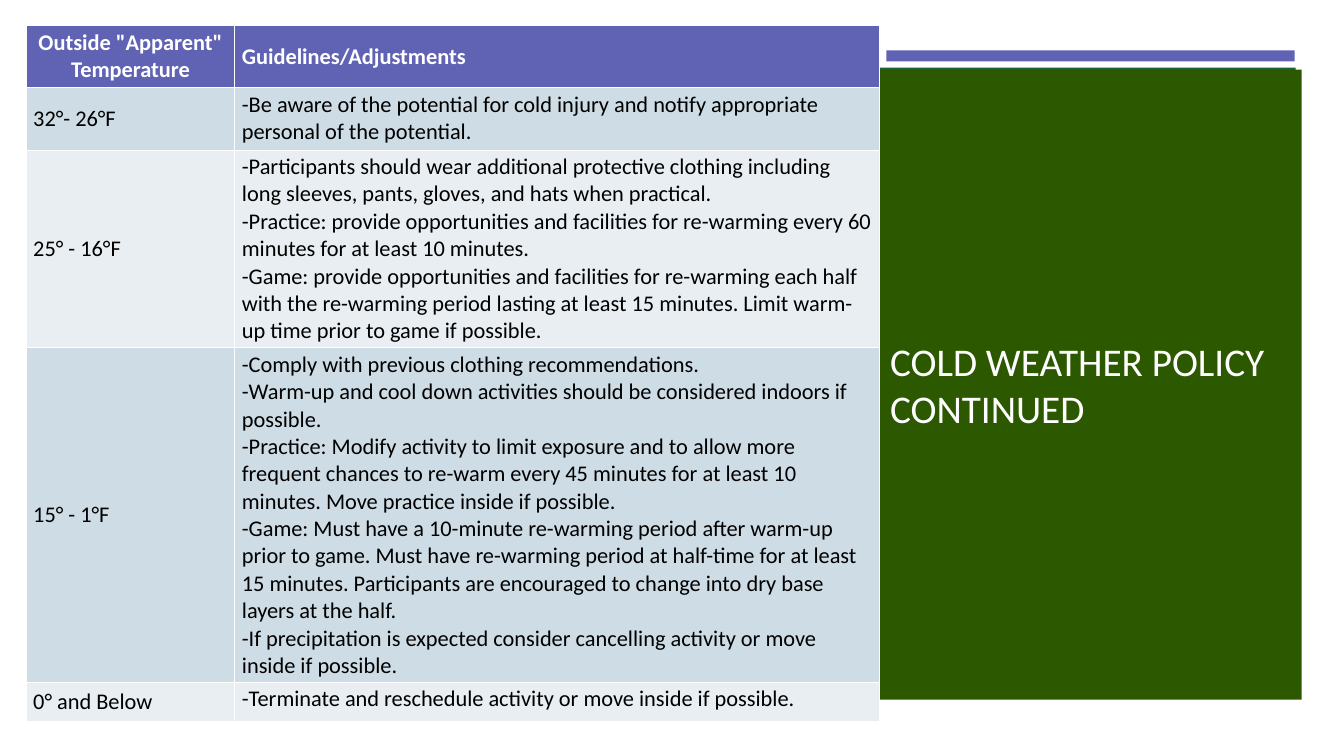
from dataclasses import dataclass

from pptx import Presentation
from pptx.dml.color import RGBColor
from pptx.enum.shapes import MSO_SHAPE as Shape
from pptx.enum.text import MSO_ANCHOR as Anchor, PP_ALIGN as Align
from pptx.util import Inches, Pt


@dataclass(frozen=True)
class Theme:
    font: str = "Calibri"
    title_size: int = 28
    table_size: int = 16
    purple: str = "6063B4"
    band_green: str = "1E6238"
    title_green: str = "2C5800"
    odd_row: str = "CEDCE5"
    even_row: str = "E8EEF2"
    white: str = "FFFFFF"
    title_text: str = "FFFEFF"
    black: str = "000000"


@dataclass(frozen=True)
class Block:
    left: float
    top: float
    width: float
    height: float
    color: str


@dataclass(frozen=True)
class Guideline:
    temperature: str
    height: float
    actions: tuple[str, ...]


THEME = Theme()

ACCENT_BAR = Block(8.79, 0.5, 4.05, 0.11, THEME.purple)
GREEN_BAND = Block(8.72, 0.67, 4.13, 1.3, THEME.band_green)
TITLE_PANEL = Block(8.73, 0.69, 4.18, 6.25, THEME.title_green)

COLUMN_WIDTHS = (2.07, 6.39)
HEADER = Guideline('Outside "Apparent" Temperature', 0.62, ("Guidelines/Adjustments",))
GUIDELINES = (
    Guideline("32°- 26°F", 0.62, (
        "-Be aware of the potential for cold injury and notify appropriate personal of the potential.",
    )),
    Guideline("25° - 16°F", 1.93, (
        "-Participants should wear additional protective clothing including long sleeves, pants, "
        "gloves, and hats when practical.",
        "-Practice: provide opportunities and facilities for re-warming every 60 minutes for at "
        "least 10 minutes.",
        "-Game: provide opportunities and facilities for re-warming each half with the re-warming "
        "period lasting at least 15 minutes. Limit warm-up time prior to game if possible.",
    )),
    Guideline("15° - 1°F", 3.17, (
        "-Comply with previous clothing recommendations.",
        "-Warm-up and cool down activities should be considered indoors if possible.",
        "-Practice: Modify activity to limit exposure and to allow more frequent chances to "
        "re-warm every 45 minutes for at least 10 minutes. Move practice inside if possible.",
        "-Game: Must have a 10-minute re-warming period after warm-up prior to game. Must have "
        "re-warming period at half-time for at least 15 minutes. Participants are encouraged to "
        "change into dry base layers at the half.",
        "-If precipitation is expected consider cancelling activity or move inside if possible.",
    )),
    Guideline("0° and Below", 0.39, (
        "-Terminate and reschedule activity or move inside if possible.",
    )),
)


def format_text(text_frame, size: int, color: str, bold: bool = False,
                align: Align = Align.LEFT) -> None:
    for paragraph in text_frame.paragraphs:
        paragraph.alignment = align
        for run in paragraph.runs:
            run.font.name = THEME.font
            run.font.size = Pt(size)
            run.font.bold = bold
            run.font.color.rgb = RGBColor.from_string(color)


def add_block(slide, block: Block):
    shape = slide.shapes.add_shape(
        Shape.RECTANGLE, Inches(block.left), Inches(block.top),
        Inches(block.width), Inches(block.height))
    shape.shadow.inherit = False
    shape.fill.solid()
    shape.fill.fore_color.rgb = RGBColor.from_string(block.color)
    shape.line.fill.background()
    return shape


def add_title(slide, text: str) -> None:
    text_frame = add_block(slide, TITLE_PANEL).text_frame
    text_frame.word_wrap = True
    text_frame.vertical_anchor = Anchor.MIDDLE
    text_frame.text = text
    format_text(text_frame, THEME.title_size, THEME.title_text)


def fill_cell(cell, text: str, fill: str, color: str, anchor: Anchor,
              bold: bool = False, align: Align = Align.LEFT) -> None:
    cell.margin_left = cell.margin_right = Inches(0.07)
    cell.margin_top = cell.margin_bottom = Inches(0.03)
    cell.vertical_anchor = anchor
    cell.fill.solid()
    cell.fill.fore_color.rgb = RGBColor.from_string(fill)
    cell.text_frame.text = text
    format_text(cell.text_frame, THEME.table_size, color, bold, align)


def add_guideline_table(slide) -> None:
    rows = (HEADER, *GUIDELINES)
    table = slide.shapes.add_table(
        len(rows), len(COLUMN_WIDTHS), Inches(0.26), Inches(0.25),
        Inches(sum(COLUMN_WIDTHS)), Inches(sum(row.height for row in rows))).table
    for column, width in zip(table.columns, COLUMN_WIDTHS):
        column.width = Inches(width)
    for index, row in enumerate(rows):
        table.rows[index].height = Inches(row.height)
        temperature, actions = table.cell(index, 0), table.cell(index, 1)
        action_text = "\n".join(row.actions)
        if row is HEADER:
            fill_cell(temperature, row.temperature, THEME.purple, THEME.white,
                      Anchor.MIDDLE, True, Align.CENTER)
            fill_cell(actions, action_text, THEME.purple, THEME.white, Anchor.MIDDLE, True)
        else:
            fill = THEME.odd_row if index % 2 else THEME.even_row
            fill_cell(temperature, row.temperature, fill, THEME.black, Anchor.MIDDLE)
            fill_cell(actions, action_text, fill, THEME.black, Anchor.TOP)


def main() -> None:
    presentation = Presentation()
    presentation.slide_width = Inches(13.33)
    presentation.slide_height = Inches(7.5)
    slide = presentation.slides.add_slide(presentation.slide_layouts[6])

    # Decorative bars above the title
    add_block(slide, ACCENT_BAR)
    add_block(slide, GREEN_BAND)

    # Title panel
    add_title(slide, "COLD WEATHER POLICY \vCONTINUED")

    # Temperature guidelines
    add_guideline_table(slide)

    presentation.save("out.pptx")


if __name__ == "__main__":
    main()
